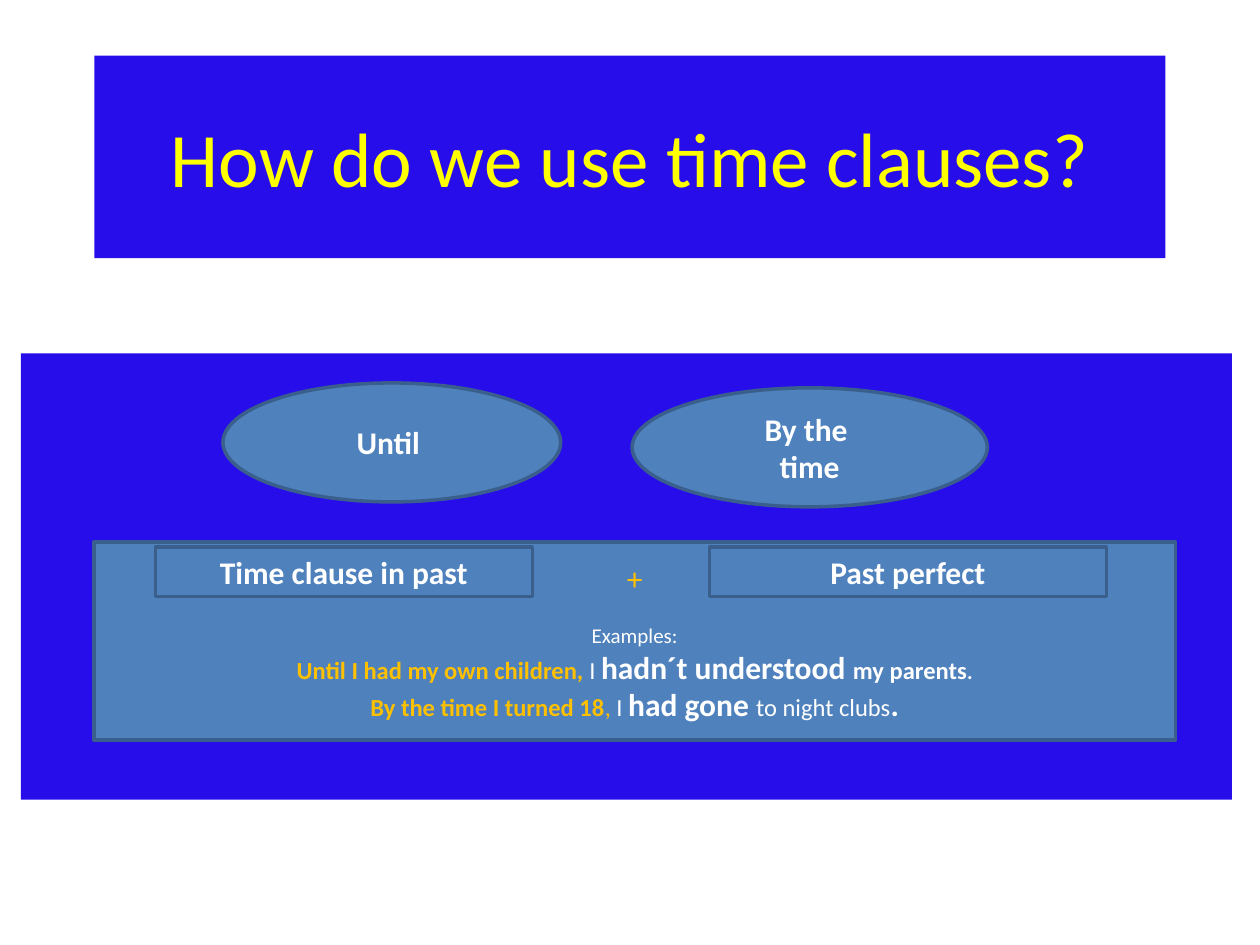
from pptx import Presentation
from pptx.dml.color import RGBColor
from pptx.enum.shapes import MSO_SHAPE
from pptx.enum.text import MSO_ANCHOR, PP_ALIGN
from pptx.util import Pt

RECT, OVAL = MSO_SHAPE.RECTANGLE, MSO_SHAPE.OVAL
MIDDLE, CENTER = MSO_ANCHOR.MIDDLE, PP_ALIGN.CENTER

THEME = {
    "font": "Calibri",
    "blue": "270DE9", "steel": "4F81BD", "edge": "3A5F8C",
    "yellow": "FFFF00", "gold": "FFC000", "white": "FFFFFF",
    "title": 44, "big": 18, "mid": 14, "small": 12,
    "line": 2, "gap": 14.6,
}

# Content: each paragraph is a list of runs (text, size, colour, bold)
TITLE = [[("How do we use time clauses?", "title", "yellow", False)]]
RULE = [
    [("+", "big", "gold", False)],
    [("Examples:", "small", "white", False)],
    [("Until I had my own children, ", "mid", "gold", True),
     ("I ", "mid", "white", False),
     ("hadn´t understood ", "big", "white", True),
     ("my parents", "mid", "white", True),
     (".", "small", "white", True)],
    [("By the time I turned 18", "mid", "gold", True),
     (", ", "mid", "gold", False),
     ("I ", "mid", "white", False),
     ("had gone ", "big", "white", True),
     ("to night clubs", "mid", "white", False),
     (".", "big", "white", True)],
]


def label(*lines):
    return [[(text, "big", "white", True)] for text in lines]


# Parts from back to front: kind, (left, top, width, height), fill, edge, text
PARTS = [
    # Title and backdrop
    (RECT, (54, 31.8, 612, 115.7), "blue", None, TITLE),
    (RECT, (12, 202, 692, 255), "blue", None, []),
    # Time words
    (OVAL, (127.4, 218.8, 193, 68), "steel", "edge", label("Until ")),
    (OVAL, (361.2, 221.6, 203, 68), "steel", "edge", label("By the ", "time")),
    # Rule panel and its two labels
    (RECT, (53.7, 309.8, 618, 113.2), "steel", "edge", RULE),
    (RECT, (88.8, 312.6, 215.4, 28.3), "steel", "edge",
     label("Time clause in past")),
    (RECT, (405.4, 312.6, 226.8, 28.3), "steel", "edge",
     label("Past perfect")),
]


def color(name):
    return RGBColor.from_string(THEME[name])


def write(frame, lines):
    frame.word_wrap = True
    frame.vertical_anchor = MIDDLE
    for i, line in enumerate(lines):
        para = frame.paragraphs[0] if i == 0 else frame.add_paragraph()
        para.alignment = CENTER
        if line[0][0] == "Examples:":
            para.space_before = Pt(THEME["gap"])
        for text, size, tint, bold in line:
            run = para.add_run()
            run.text = text
            font = run.font
            font.name, font.size, font.bold = THEME["font"], Pt(THEME[size]), bold
            font.color.rgb = color(tint)


def draw(slide, kind, box, fill, edge, lines):
    shape = slide.shapes.add_shape(kind, *(Pt(n) for n in box))
    shape.shadow.inherit = False
    shape.fill.solid()
    shape.fill.fore_color.rgb = color(fill)
    if edge:
        shape.line.color.rgb = color(edge)
        shape.line.width = Pt(THEME["line"])
    else:
        shape.line.fill.background()
    if lines:
        write(shape.text_frame, lines)


def main():
    deck = Presentation()
    deck.slide_width, deck.slide_height = Pt(720), Pt(540)
    slide = deck.slides.add_slide(deck.slide_layouts[6])
    for part in PARTS:
        draw(slide, *part)
    deck.save("out.pptx")


if __name__ == "__main__":
    main()
